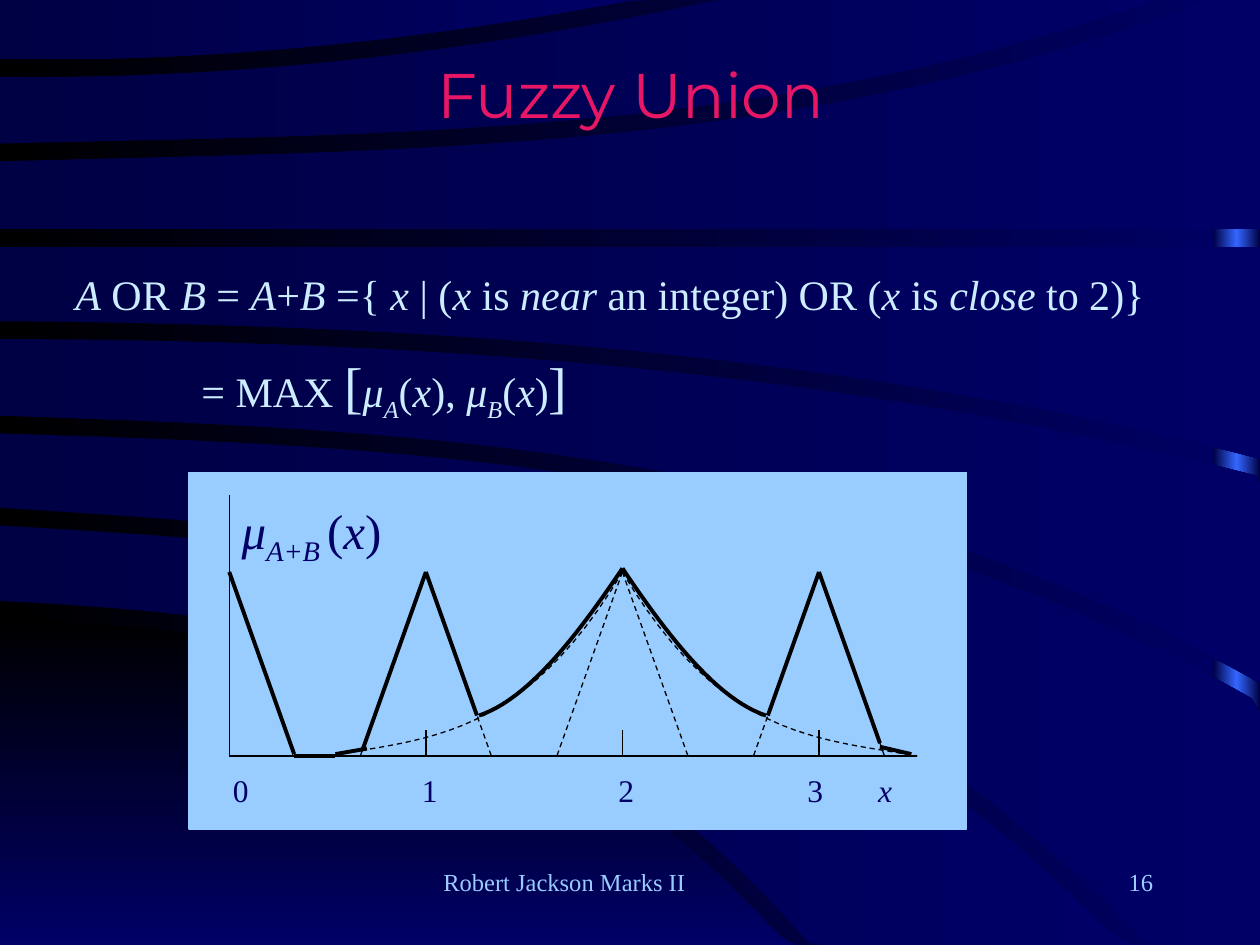
from copy import deepcopy
from math import hypot

from lxml import etree
from pptx import Presentation
from pptx import util as u
from pptx.dml.color import RGBColor
from pptx.enum import dml, shapes, text
from pptx.oxml.ns import qn

COLORS = {
    "black": "000000", "navy": "000066", "deep": "000044", "glow": "3366FF",
    "panel": "99CCFF", "formula": "CCECFF", "title": "E81766",
}
COLUMNS, ROWS = 10, 7.5  # one-inch grid
SERIF = "Times New Roman"
GAP = 0.14  # dark gap between two background bands
ORIGIN_X, ORIGIN_Y, STEP_X, STEP_Y = 1.82, 6, 1.56, 1.46  # plot axes

# Lower edges of the bands: reach, then heights at even steps from 0 to the reach
BAND_EDGES = [
    (5.01, (0.47, 0.43, 0.27, 0)),
    (9.17, (1.14, 1.05, 0.76, 0)),
    (COLUMNS, (1.82,) * 4),
    (COLUMNS, (2.55, 2.65, 2.98, 3.64)),
    (COLUMNS, (3.3, 3.48, 4.06, 5.42)),
    (9.09, (4.03, 4.31, 5.23, 7.48)),
    (6.42, (4.77, 4.98, 5.72, 7.48)),
]
BAND_CORNERS = {2: [(COLUMNS, 0)], 5: [(COLUMNS, ROWS)]}
CLOSE_TO_TWO = (1, 0.36, 0.1, 0)
UNION_SLOPE = (1.02, 0.66, 0.38, 0.22)


def rgb(name):
    return RGBColor.from_string(COLORS[name])


def cubic(heights, t):
    """Height at t of the cubic through four heights at t = 0, 1/3, 2/3 and 1."""
    total = 0
    for i, height in enumerate(heights):
        for j in range(4):
            if j != i:
                height *= (3 * t - j) / (i - j)
        total += height
    return total


def band_edge(reach, heights, offset=0, step=0.02):
    """Points from the left side to where the edge, moved along its normal, leaves the slide."""
    points = []
    for index in range(-5, 61):
        t = index * step
        height = cubic(heights, t)
        run, rise = reach * step, cubic(heights, t + step) - height
        length = hypot(run, rise)
        x = reach * t - offset * rise / length
        y = height + offset * run / length
        if x >= 0 or not points:
            points.append((min(max(x, 0), COLUMNS), min(max(y, 0), ROWS)))
        else:
            points[0] = (0, y)
        if x >= COLUMNS or not 0 <= y <= ROWS:
            break
    return points


def plot(point):
    """Turn (x, membership) into a place on the slide grid."""
    return ORIGIN_X + STEP_X * point[0], ORIGIN_Y - STEP_Y * point[1]


def set_gradient(fill, element, names, angle=0):
    """Spread the named colours evenly; element is the XML that holds the fill."""
    fill.gradient()
    fill.gradient_angle = angle
    stop_list = element.find(".//" + qn("a:gsLst"))
    while len(stop_list) < len(names):
        stop_list.append(deepcopy(stop_list[0]))
    for index, (stop, name) in enumerate(zip(fill.gradient_stops, names)):
        stop.color.rgb = rgb(name)
        stop.position = index / (len(names) - 1)


def set_line(line, width, dashed):
    line.color.rgb = rgb("black")
    line.width = u.Pt(width)
    if dashed:
        line.dash_style = dml.MSO_LINE.DASH


def add_outline(slide, points, close=True):
    places = [(u.Inches(x), u.Inches(y)) for x, y in points]
    builder = slide.shapes.build_freeform(*places[0])
    builder.add_line_segments(places[1:], close=close)
    shape = builder.convert_to_shape()
    shape.shadow.inherit = False
    return shape


def add_band(slide, points, names, angle=0):
    band = add_outline(slide, points)
    set_gradient(band.fill, band._element, names, angle)
    band.line.fill.background()


def add_curve(slide, start, end, heights, width=0.75, dashed=False):
    """Draw a membership curve on the plot from x = start to x = end."""
    samples = 24
    points = [plot((start + (end - start) * i / samples, cubic(heights, i / samples)))
              for i in range(samples + 1)]
    curve = add_outline(slide, points, close=False)
    curve.fill.background()
    set_line(curve.line, width, dashed)


def add_segment(slide, start, end, width=0.75, dashed=False):
    places = [u.Inches(value) for value in plot(start) + plot(end)]
    connector = slide.shapes.add_connector(shapes.MSO_CONNECTOR.STRAIGHT, *places)
    set_line(connector.line, width, dashed)
    etree.SubElement(connector._element.spPr, qn("a:effectLst"))


def add_rectangle(slide, *box):
    shape = slide.shapes.add_shape(shapes.MSO_SHAPE.RECTANGLE, *map(u.Inches, box))
    shape.shadow.inherit = False
    return shape


def add_text(slide, box, paragraphs, size, color, font=SERIF, align=None, wrap=True):
    """Each paragraph is a list of (text, style): i italic, s subscript, b big."""
    frame = slide.shapes.add_textbox(*map(u.Inches, box)).text_frame
    frame.word_wrap = wrap
    for index, runs in enumerate(paragraphs):
        paragraph = frame.add_paragraph() if index else frame.paragraphs[0]
        paragraph.alignment = align
        if index:
            paragraph.space_before = u.Pt(19)
        for words, style in runs:
            run = paragraph.add_run()
            run.text = words
            run.font.name = font
            run.font.size = u.Pt(32 if "b" in style else size)
            run.font.italic = "i" in style
            run.font.color.rgb = rgb(color)
            if "s" in style:
                run._r.get_or_add_rPr().set("baseline", "-25000")
    return frame


def add_background(slide):
    set_gradient(slide.background.fill, slide.element, ("black", "navy"))
    strip = add_rectangle(slide, 9.63, 0, 0.37, ROWS)
    set_gradient(strip.fill, strip._element, ("deep", "glow", "deep"))
    strip.line.fill.background()
    upper = [(0, 0)]
    for index, edge in enumerate(BAND_EDGES):
        lower = band_edge(*edge)[::-1]
        add_band(slide, upper + BAND_CORNERS.get(index, []) + lower, ("deep", "navy"))
        upper = band_edge(*edge, offset=GAP)
    add_band(slide, upper + [(0, ROWS)], ("black", "navy"), angle=270)


def add_axis_labels(slide):
    labels = [("0\t1\t2\t3\t", ""), ("x", "i")]
    frame = add_text(slide, (1.75, 6.07, 6.75, 0.5), [labels], 18, "navy")
    properties = frame.paragraphs[0]._p.get_or_add_pPr()
    tabs = etree.SubElement(properties, qn("a:tabLst"))
    for position in (1.5, 3.06, 4.56, 5.12):
        etree.SubElement(tabs, qn("a:tab"), pos=str(u.Inches(position)), algn="l")


def add_membership_plot(slide):
    panel = add_rectangle(slide, 1.5, 3.75, 6.17, 2.83)
    panel.fill.solid()
    panel.fill.fore_color.rgb = panel.line.color.rgb = rgb("panel")
    panel.line.width = u.Pt(0.75)
    add_axis_labels(slide)
    add_text(slide, (1.82, 3.92, 1.52, 0.5),
             [[("μ", "i"), ("A+B ", "is"), ("(", ""), ("x", "i"), (")", "")]], 28, "navy")
    add_segment(slide, (0, 0), (3.5, 0))
    add_segment(slide, (0, 0), (0, 1.42))
    for peak in (1, 2, 3):
        add_segment(slide, (peak, 0), (peak, 0.14))
        for side in (-1, 1):
            hidden = (peak, side) not in ((1, -1), (3, 1))
            add_segment(slide, (peak, 1), (peak + side / 3, 0), dashed=hidden)
    for side in (-1, 1):
        add_curve(slide, 2, 2 + side * 1.5, CLOSE_TO_TWO, dashed=True)
        add_curve(slide, 2, 2 + side * 0.73, UNION_SLOPE, width=2.25)
    for peak, foot in ((0, 0.33), (1, 0.68), (1, 1.26), (3, 2.74), (3, 3.31)):
        add_segment(slide, (peak, 1), (foot, 1 - 3 * abs(foot - peak)), width=2.25)
    for start, end in (((0.33, 0), (0.54, 0)), ((0.54, 0.01), (0.7, 0.04)),
                       ((3.31, 0.05), (3.47, 0.01))):
        add_segment(slide, start, end, width=2.25)


def add_formula(slide):
    definition = [("A", "i"), (" OR ", ""), ("B", "i"), (" = ", ""), ("A", "i"), ("+", ""),
                  ("B", "i"), (" ={ ", ""), ("x", "i"), (" | (", ""), ("x", "i"), (" is ", ""),
                  ("near", "i"), (" an integer) OR (", ""), ("x", "i"), (" is ", ""),
                  ("close", "i"), (" to 2)}", "")]
    maximum = [("\t\t= MAX ", ""), ("[", "b"), ("μ", "i"), ("A", "is"), ("(", ""), ("x", "i"),
               ("), ", ""), ("μ", "i"), ("B", "is"), ("(", ""), ("x", "i"), (")", ""), ("]", "b")]
    add_text(slide, (0.5, 2.08, 8.83, 1.3), [definition, maximum], 24, "formula")


def main():
    presentation = Presentation()
    presentation.slide_width, presentation.slide_height = u.Inches(COLUMNS), u.Inches(ROWS)
    slide = presentation.slides.add_slide(presentation.slide_layouts[6])
    add_background(slide)
    add_text(slide, (3.42, 6.83, 3.17, 0.5), [[("Robert Jackson Marks II", "")]], 14, "panel")
    add_text(slide, (7.17, 6.83, 2.08, 0.5), [[("16", "")]], 14, "panel",
             align=text.PP_ALIGN.RIGHT)
    add_text(slide, (0.66, 0.39, 8.69, 1.25), [[("Fuzzy Union", "")]], 36, "title",
             font="Montserrat", align=text.PP_ALIGN.CENTER, wrap=False)
    add_membership_plot(slide)
    add_formula(slide)
    presentation.save("out.pptx")


if __name__ == "__main__":
    main()
